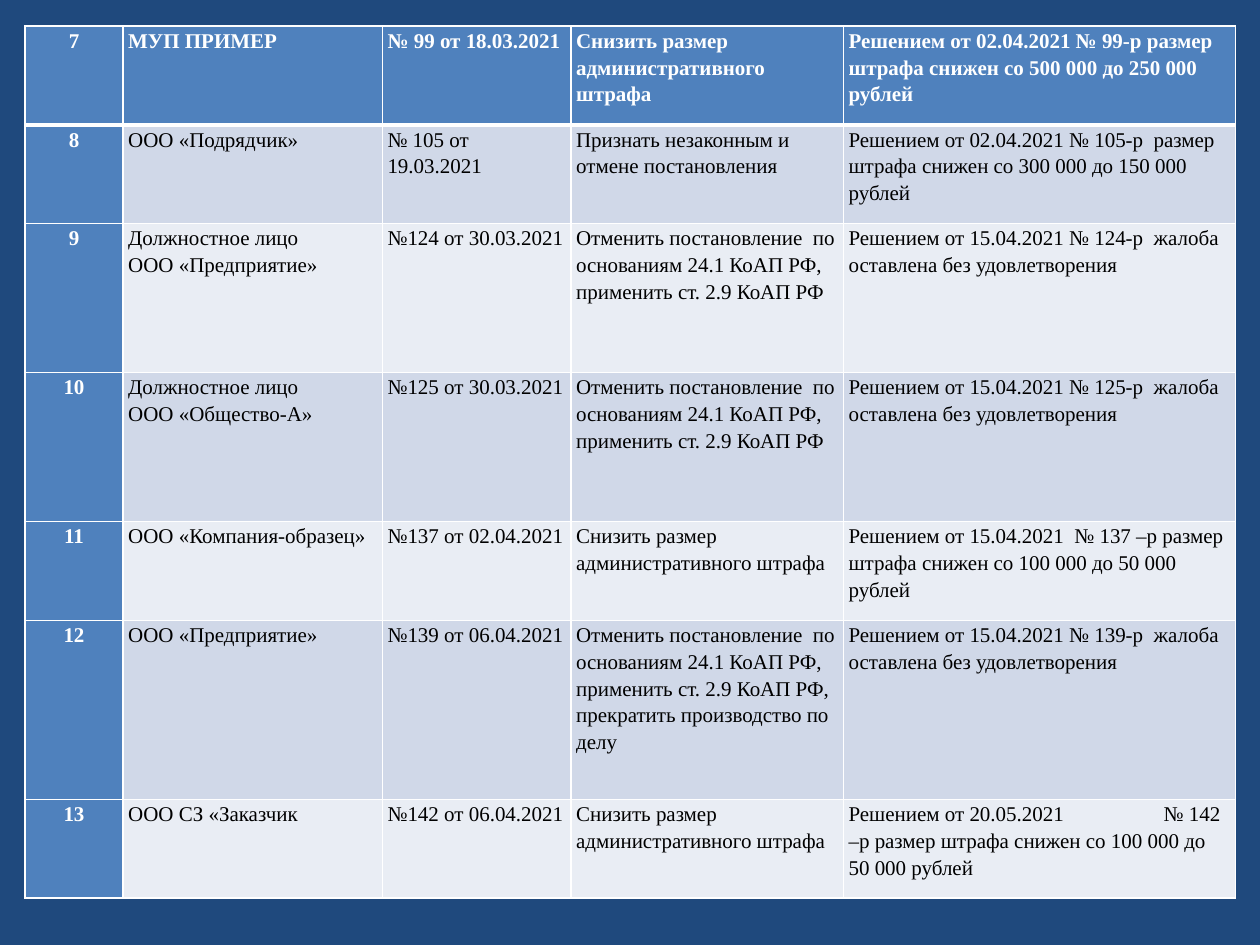
from lxml import etree
from pptx import Presentation
from pptx.dml.color import RGBColor
from pptx.enum.text import MSO_ANCHOR, PP_ALIGN
from pptx.oxml.ns import qn
from pptx.util import Pt

LEFT, MID, JUST = PP_ALIGN.LEFT, PP_ALIGN.CENTER, PP_ALIGN.JUSTIFY
TOP = MSO_ANCHOR.TOP

HUES = {
    "back": "1F497D",
    "head": "4F81BD",
    "dark": "D0D8E8",
    "pale": "E9EDF4",
    "white": "FFFFFF",
    "black": "000000",
}
FONT = "Times New Roman"
SIZE = 12

CUT = "Снизить размер административного штрафа"
VOID = "Отменить постановление  по основаниям 24.1 КоАП РФ, применить ст. 2.9 КоАП РФ"
KEPT = "жалоба оставлена без удовлетворения"

ROWS = [
    ("7", "МУП ПРИМЕР", "№ 99 от 18.03.2021", CUT,
     "Решением от 02.04.2021 № 99-р размер штрафа снижен со 500 000 до 250 000 рублей"),
    ("8", "ООО «Подрядчик»", "№ 105 от 19.03.2021",
     "Признать незаконным и отмене постановления",
     "Решением от 02.04.2021 № 105-р  размер штрафа снижен со 300 000 до 150 000 рублей"),
    ("9", "Должностное лицо\nООО «Предприятие»", "№124 от 30.03.2021", VOID,
     "Решением от 15.04.2021 № 124-р  " + KEPT),
    ("10", "Должностное лицо\nООО «Общество-А»", "№125 от 30.03.2021", VOID,
     "Решением от 15.04.2021 № 125-р  " + KEPT),
    ("11", "ООО «Компания-образец»", "№137 от 02.04.2021", CUT,
     "Решением от 15.04.2021  № 137 –р размер штрафа снижен со 100 000 до 50 000 рублей"),
    ("12", "ООО «Предприятие»", "№139 от 06.04.2021",
     VOID + ", прекратить производство по делу",
     "Решением от 15.04.2021 № 139-р  " + KEPT),
    ("13", "ООО СЗ «Заказчик", "№142 от 06.04.2021", CUT,
     "Решением от 20.05.2021\t№ 142 –р размер штрафа снижен со 100 000 до 50 000 рублей"),
]
WIDE = [56.2, 148.2, 107.8, 155.7, 224]
HIGH = [56.4, 56.4, 85.2, 85.2, 56.4, 102.4, 56.4]
LEAD, DROP = 14.2, 15
TAB = 180


def tint(name):
    return RGBColor.from_string(HUES[name])


def write(cell, text, hue="black", bold=False, align=LEFT):
    frame = cell.text_frame
    for i, line in enumerate(text.split("\n")):
        para = frame.add_paragraph() if i else frame.paragraphs[0]
        para.alignment = align
        para.line_spacing = 1.15
        if "\t" in line:
            stops = etree.SubElement(para._p.get_or_add_pPr(), qn("a:tabLst"))
            etree.SubElement(stops, qn("a:tab"), pos=str(Pt(TAB)), algn="l")
        run = para.add_run()
        run.text = line
        font = run.font
        font.name, font.size, font.bold = FONT, Pt(SIZE), bold
        font.color.rgb = tint(hue)


def edge(cell, sides):
    props = cell._tc.get_or_add_tcPr()
    for i, (side, width) in enumerate(sides.items()):
        line = etree.Element(qn("a:ln" + side), w=str(Pt(width)))
        fill = etree.SubElement(line, qn("a:solidFill"))
        etree.SubElement(fill, qn("a:srgbClr"), val=HUES["white"])
        props.insert(i, line)


def main():
    deck = Presentation()
    deck.slide_width, deck.slide_height = Pt(720), Pt(540)
    slide = deck.slides.add_slide(deck.slide_layouts[6])
    slide.background.fill.solid()
    slide.background.fill.fore_color.rgb = tint("back")

    grid = slide.shapes.add_table(
        len(ROWS), len(WIDE), Pt(LEAD), Pt(DROP), Pt(sum(WIDE)), Pt(sum(HIGH))
    ).table
    grid.first_col = True
    for col, width in zip(grid.columns, WIDE):
        col.width = Pt(width)
    for r, (texts, high) in enumerate(zip(ROWS, HIGH)):
        grid.rows[r].height = Pt(high)
        band = "dark" if r % 2 else "pale"
        for c, text in enumerate(texts):
            cell = grid.cell(r, c)
            head = r == 0 or c == 0
            cell.margin_left = cell.margin_right = Pt(2.88)
            cell.margin_top = cell.margin_bottom = 0
            cell.vertical_anchor = TOP
            cell.fill.solid()
            cell.fill.fore_color.rgb = tint("head" if head else band)
            edge(cell, {"L": 1, "R": 1, "T": 3 if r == 1 else 1, "B": 3 if r == 0 else 1})
            align = MID if c == 0 else JUST if c == 1 and r > 2 else LEFT
            write(cell, text, hue="white" if head else "black", bold=head, align=align)

    deck.save("out.pptx")


if __name__ == "__main__":
    main()
